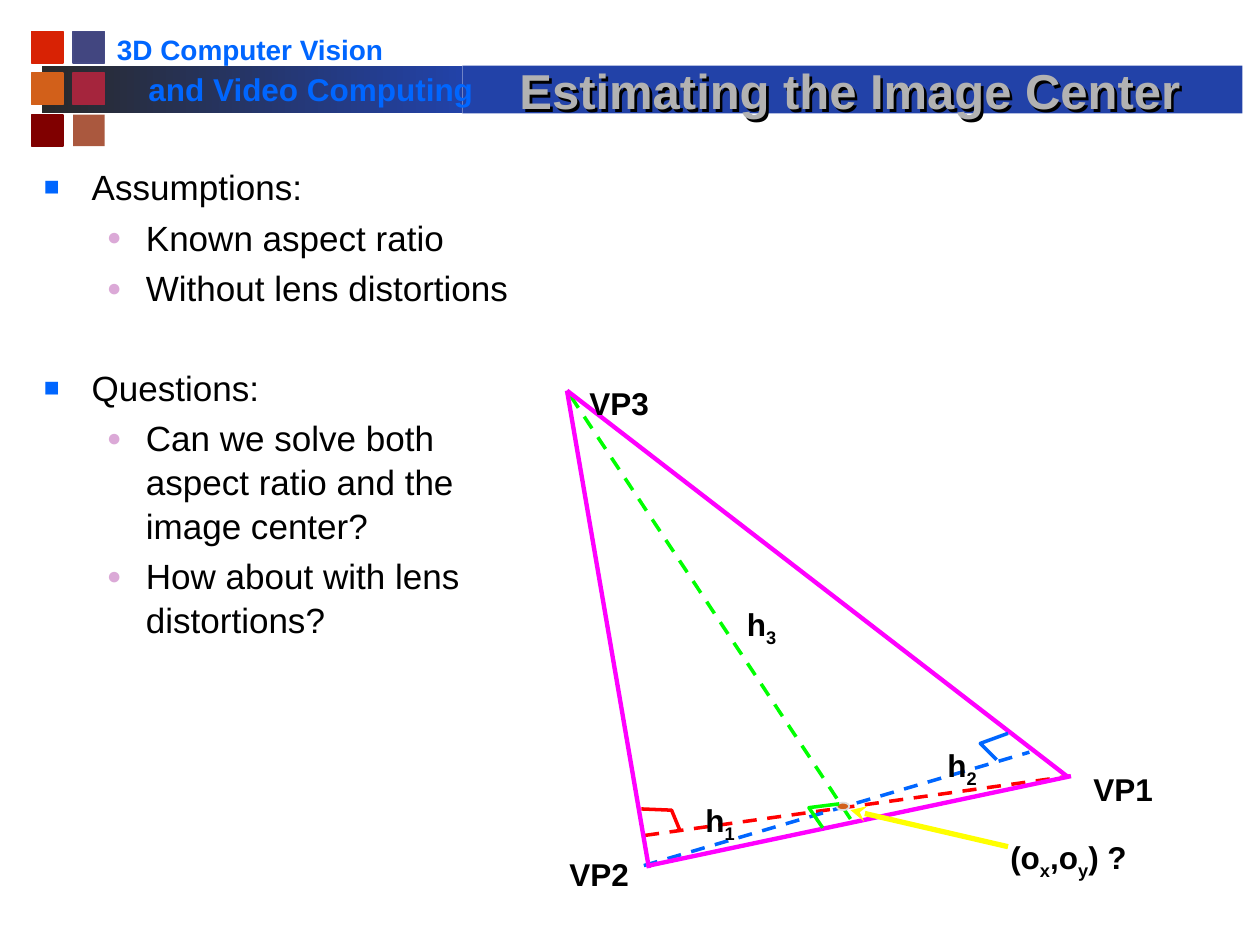
from dataclasses import dataclass

from lxml import etree
from pptx import Presentation
from pptx import util as u
from pptx.dml.color import RGBColor
from pptx.enum import dml, shapes, text
from pptx.oxml import ns


@dataclass(frozen=True)
class Theme:
    font: str = "Arial"
    black: str = "000000"
    grey: str = "B2B2B2"
    pale: str = "DDDDDD"
    dark: str = "292929"
    navy: str = "2242A8"
    blue: str = "0066FF"
    red: str = "FF0000"
    green: str = "00FF00"
    pink: str = "FF00FF"
    yellow: str = "FFFF00"
    orange: str = "D2601A"
    lilac: str = "DBA9D7"
    title: int = 28
    body: int = 20
    label: int = 18
    small: int = 16


T = Theme()
# (fill, line) of the header squares, row by row
SQUARES = [
    [("D82204", "D82204"), ("424680", "454A85")],
    [(T.orange, T.orange), ("A5253D", "A5253D")],
    [("800000", "800000"), ("AA583E", None)],
]
BODY = [
    (0, "Assumptions:"),
    (1, "Known aspect ratio"),
    (1, "Without lens distortions"),
    (0, "Questions:"),
    (1, "Can we solve both aspect ratio and the image center?"),
    (1, "How about with lens distortions?"),
]
# level: margin, hanging indent, bullet, bullet size, bullet colour
LEVELS = [(0.38, 0.38, "■", 75, T.blue), (0.81, 0.31, "●", 70, T.lilac)]
SIDES = [
    ((4.5, 3.1), (5.15, 6.89)),
    ((4.5, 3.1), (8.48, 6.17)),
    ((5.15, 6.87), (8.5, 6.16)),
]
HEIGHTS = [
    ((5.12, 6.63), (8.49, 6.16), T.red),
    ((5.11, 6.87), (8.17, 5.97), T.blue),
    ((6.75, 6.5), (4.5, 3.1), T.green),
]
CORNERS = [
    ([(8, 5.82), (7.78, 5.9), (7.91, 6.03)], T.blue),
    ([(6.66, 6.38), (6.42, 6.41), (6.53, 6.57)], T.green),
    ([(5.4, 6.6), (5.33, 6.43), (5.09, 6.42)], T.red),
]
# left, top, width, then runs; every second run is a subscript
LABELS = [
    (8.58, 6.06, 0.92, ["VP1"]),
    (4.42, 6.74, 0.74, ["VP2"]),
    (4.58, 3, 0.74, ["VP3"]),
    (5.83, 4.75, 0.67, ["h", "3"]),
    (5.5, 6.31, 0.67, ["h", "1"]),
    (7.42, 5.87, 0.67, ["h", "2"]),
    (7.92, 6.6, 1.46, ["(o", "x", ",o", "y", ") ?"]),
]


def rgb(code):
    return RGBColor.from_string(code)


def sub(parent, tag, **attrs):
    return etree.SubElement(parent, ns.qn(tag), attrs)


def stroke(line, color, width):
    line.color.rgb = rgb(color)
    line.width = u.Pt(width)


def block(slide, kind, box, fill, edge=None):
    """Add a preset shape; a pair of fills makes a left-to-right gradient."""
    shape = slide.shapes.add_shape(kind, *map(u.Inches, box))
    shape.shadow.inherit = False
    if isinstance(fill, tuple):
        shape.fill.gradient()
        shape.fill.gradient_angle = 0
        for stop, color in zip(shape.fill.gradient_stops, fill):
            stop.color.rgb = rgb(color)
    else:
        shape.fill.solid()
        shape.fill.fore_color.rgb = rgb(fill)
    if edge:
        stroke(shape.line, edge, 1)
    else:
        shape.line.fill.background()


def rule(slide, start, end, color, width, dash=False, arrow=False):
    ends = [u.Inches(v) for v in (*start, *end)]
    line = slide.shapes.add_connector(shapes.MSO_CONNECTOR.STRAIGHT, *ends)
    stroke(line.line, color, width)
    if dash:
        line.line.dash_style = dml.MSO_LINE.DASH
    if arrow:
        sub(line.line._get_or_add_ln(), "a:tailEnd", type="stealth")
    sub(line._element.spPr, "a:effectLst")


def corner(slide, points, color):
    """Draw the open mark of a right angle."""
    first, *rest = [(u.Inches(x), u.Inches(y)) for x, y in points]
    path = slide.shapes.build_freeform(*first)
    path.add_line_segments(rest, close=False)
    shape = path.convert_to_shape()
    shape.shadow.inherit = False
    shape.fill.background()
    stroke(shape.line, color, 2)


def style(para, size, color, bold=True):
    font = para.font
    font.name, font.size, font.bold = T.font, u.Pt(size), bold
    font.color.rgb = rgb(color)


def label(slide, box, runs, size, color, wrap=True):
    """Add one bold line whose odd runs are subscripts."""
    shape = slide.shapes.add_textbox(*map(u.Inches, box))
    shape.text_frame.word_wrap = wrap
    para = shape.text_frame.paragraphs[0]
    style(para, size, color)
    for i, words in enumerate(runs):
        run = para.add_run()
        run.text = words
        if i % 2:
            run.font._element.set("baseline", "-25000")
    return shape


def title(slide):
    shape = label(slide, (3.83, 0.5, 5.83, 0.5),
                  ["Estimating the Image Center"], T.title, T.grey)
    shape.text_frame.vertical_anchor = text.MSO_ANCHOR.BOTTOM
    shape.text_frame.paragraphs[0].alignment = text.PP_ALIGN.CENTER
    effects = sub(shape._element.spPr, "a:effectLst")
    shade = sub(effects, "a:outerShdw", dist=str(u.Inches(0.03)),
                dir="2700000", algn="ctr", rotWithShape="0")
    sub(shade, "a:srgbClr", val=T.black)


def bullet(para, level):
    left, hang, mark, size, color = LEVELS[level]
    props = para._p.get_or_add_pPr()
    props.set("marL", str(u.Inches(left)))
    props.set("indent", str(-u.Inches(hang)))
    tint = sub(props, "a:buClr")
    sub(tint, "a:srgbClr", val=color)
    sub(props, "a:buSzPct", val=str(size * 1000))
    sub(props, "a:buFont", typeface=T.font)
    sub(props, "a:buChar", char=mark)


def body(slide):
    shape = slide.shapes.add_textbox(*map(u.Inches, (0.25, 1.25, 4.17, 5.92)))
    frame = shape.text_frame
    frame.word_wrap = True
    for i, (level, words) in enumerate(BODY):
        para = frame.add_paragraph() if i else frame.paragraphs[0]
        para.text = words
        para.level = level
        para.line_spacing = 1.04
        if i:
            para.space_before = u.Pt(4 if level else 32)
        bullet(para, level)
        style(para, T.body, T.black, bold=False)


def header(slide):
    rect = shapes.MSO_SHAPE.RECTANGLE
    block(slide, rect, (0.33, 0.52, 3.34, 0.38), (T.dark, T.navy))
    block(slide, rect, (3.67, 0.52, 6.19, 0.38), T.navy)
    for r, row in enumerate(SQUARES):
        for c, (fill, edge) in enumerate(row):
            box = (0.25 + c * 0.33, 0.25 + r * 0.33, 0.25, 0.25)
            block(slide, rect, box, fill, edge)
    label(slide, (0.83, 0.21, 2.32, 0.37), ["3D Computer Vision"],
          T.small, T.blue, wrap=False)
    label(slide, (1.08, 0.51, 2.83, 0.4), ["and Video Computing"],
          T.label, T.blue)


def diagram(slide):
    for start, end, color in HEIGHTS:
        rule(slide, start, end, color, 2, dash=True)
    for start, end in SIDES:
        rule(slide, start, end, T.pink, 2.5)
    block(slide, shapes.MSO_SHAPE.OVAL, (6.64, 6.37, 0.1, 0.06),
          T.orange, T.pale)
    for points, color in CORNERS:
        corner(slide, points, color)
    for left, top, width, runs in LABELS:
        label(slide, (left, top, width, 0.4), runs, T.label, T.black)
    rule(slide, (8, 6.72), (6.75, 6.43), T.yellow, 3, arrow=True)


def main():
    deck = Presentation()
    deck.slide_width, deck.slide_height = u.Inches(10), u.Inches(7.5)
    slide = deck.slides.add_slide(deck.slide_layouts[6])
    header(slide)
    title(slide)
    body(slide)
    diagram(slide)
    deck.save("out.pptx")


if __name__ == "__main__":
    main()
